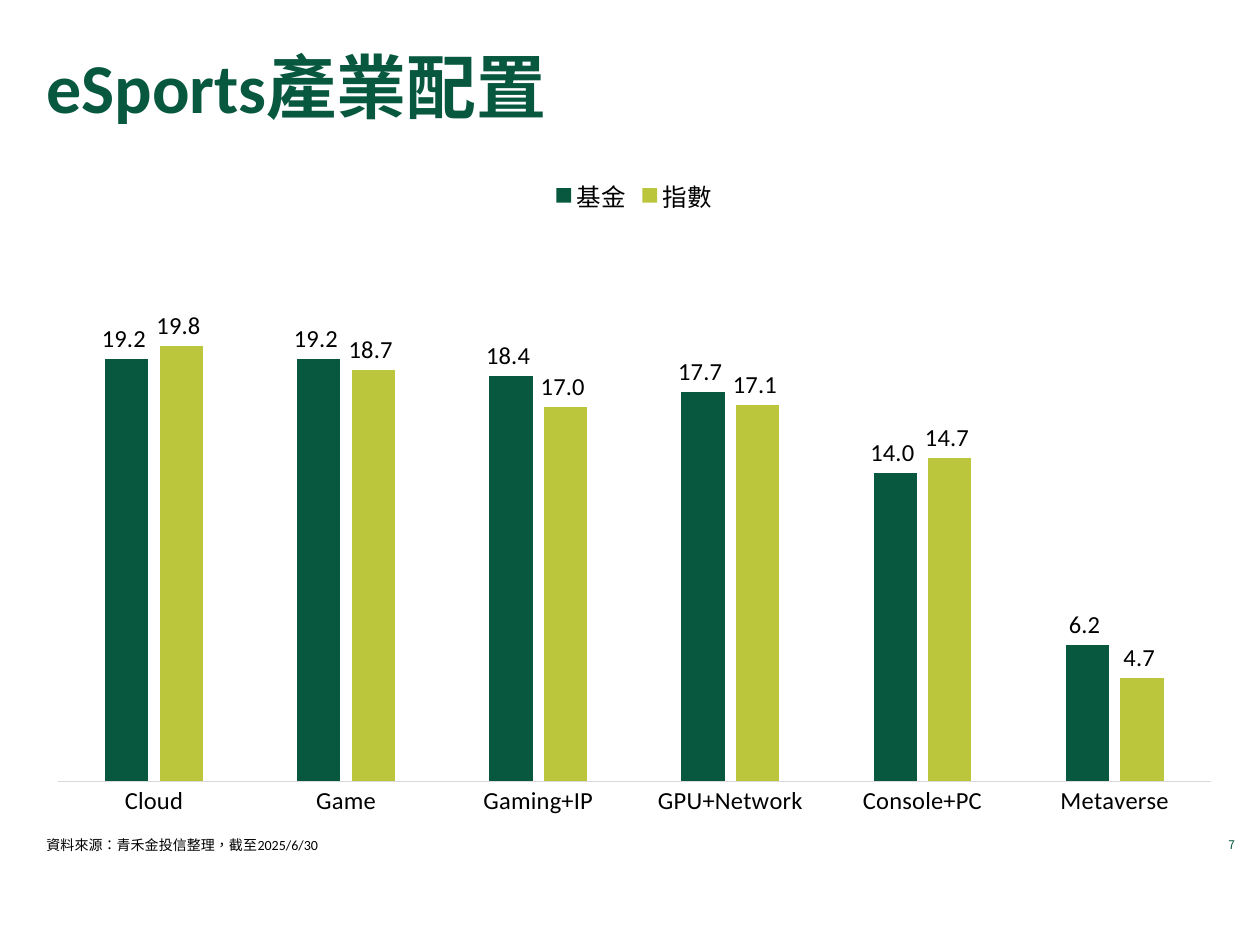
from pptx import Presentation, util as u
from pptx.chart.data import CategoryChartData
from pptx.dml.color import RGBColor
from pptx.enum import chart as ch, lang, text

WIDTH, HEIGHT = u.Inches(10), u.Inches(7.5)
GREEN = RGBColor(0x08, 0x58, 0x40)
LIME = RGBColor(0xBB, 0xC6, 0x3D)
GREY = RGBColor(0xD9, 0xD9, 0xD9)
BLACK = RGBColor(0, 0, 0)
LATIN, CJK = "Calibri", "Noto Sans CJK SC"
NUMBER_FORMAT = "#,##0.0_ ;[Red]\\-#,##0.0\\ "

SECTORS = ["Cloud", "Game", "Gaming+IP", "GPU+Network", "Console+PC", "Metaverse"]
WEIGHTS = {
    "基金": (GREEN, [19.2, 19.2, 18.4, 17.7, 14.0, 6.2]),
    "指數": (LIME, [19.8, 18.7, 17.0, 17.1, 14.7, 4.7]),
}


def apply(target, **values):
    for name, value in values.items():
        setattr(target, name, value)


def style_font(font, size, color=BLACK, name=LATIN, bold=False):
    apply(font, size=u.Pt(size), name=name, bold=bold)
    font.color.rgb = color


def frame(left, top, width, height):
    """Turn shares of the slide's size into lengths."""
    return (int(WIDTH * left), int(HEIGHT * top),
            int(WIDTH * width), int(HEIGHT * height))


def add_text(page, area, words, align=text.PP_ALIGN.LEFT,
             anchor=text.MSO_ANCHOR.TOP, **look):
    box = page.shapes.add_textbox(*frame(*area)).text_frame
    apply(box, word_wrap=True, vertical_anchor=anchor)
    para = box.paragraphs[0]
    para.alignment = align
    span = para.add_run()
    span.text = words
    span.font.language_id = lang.MSO_LANGUAGE_ID.TRADITIONAL_CHINESE
    style_font(span.font, **look)


def style_axes(chart):
    sectors, weights = chart.category_axis, chart.value_axis
    apply(sectors, major_tick_mark=ch.XL_TICK_MARK.NONE, has_major_gridlines=False)
    apply(sectors.format.line, width=u.Pt(0.75))
    sectors.format.line.color.rgb = GREY
    style_font(sectors.tick_labels.font, 14)
    apply(weights, visible=False, has_major_gridlines=False,
          minimum_scale=0, maximum_scale=25)


def style_series(series, color):
    series.format.fill.solid()
    series.format.fill.fore_color.rgb = color
    labels = series.data_labels
    apply(labels, show_value=True, position=ch.XL_LABEL_POSITION.OUTSIDE_END,
          number_format=NUMBER_FORMAT, number_format_is_linked=False)
    style_font(labels.font, 14)


def add_column_chart(page, area):
    data = CategoryChartData(number_format=NUMBER_FORMAT)
    data.categories = SECTORS
    for name, (_, values) in WEIGHTS.items():
        data.add_series(name, values)
    chart = page.shapes.add_chart(
        ch.XL_CHART_TYPE.COLUMN_CLUSTERED, *frame(*area), data).chart
    apply(chart, has_title=False, has_legend=True)
    style_font(chart.font, 14)
    apply(chart.legend, position=ch.XL_LEGEND_POSITION.TOP, include_in_layout=False)
    style_font(chart.legend.font, 14)
    style_axes(chart)
    plot = chart.plots[0]
    apply(plot, gap_width=219, overlap=-27, vary_by_categories=False)
    for series in plot.series:
        style_series(series, WEIGHTS[series.name][0])


def main():
    deck = Presentation()
    apply(deck, slide_width=WIDTH, slide_height=HEIGHT)
    page = deck.slides.add_slide(deck.slide_layouts[6])
    add_text(page, (0.91, 0.88, 0.08, 0.05), "7", align=text.PP_ALIGN.RIGHT,
             size=6.8, color=GREEN, name=CJK)
    add_text(page, (0.027, 0.007, 0.898, 0.167), "eSports產業配置",
             anchor=text.MSO_ANCHOR.MIDDLE, size=40, color=GREEN, bold=True)
    add_text(page, (0.027, 0.879, 0.898, 0.052), "資料來源：青禾金投信整理，截至2025/6/30",
             align=text.PP_ALIGN.JUSTIFY, size=8)
    add_column_chart(page, (0.027, 0.173, 0.953, 0.705))
    deck.save("out.pptx")


if __name__ == "__main__":
    main()
